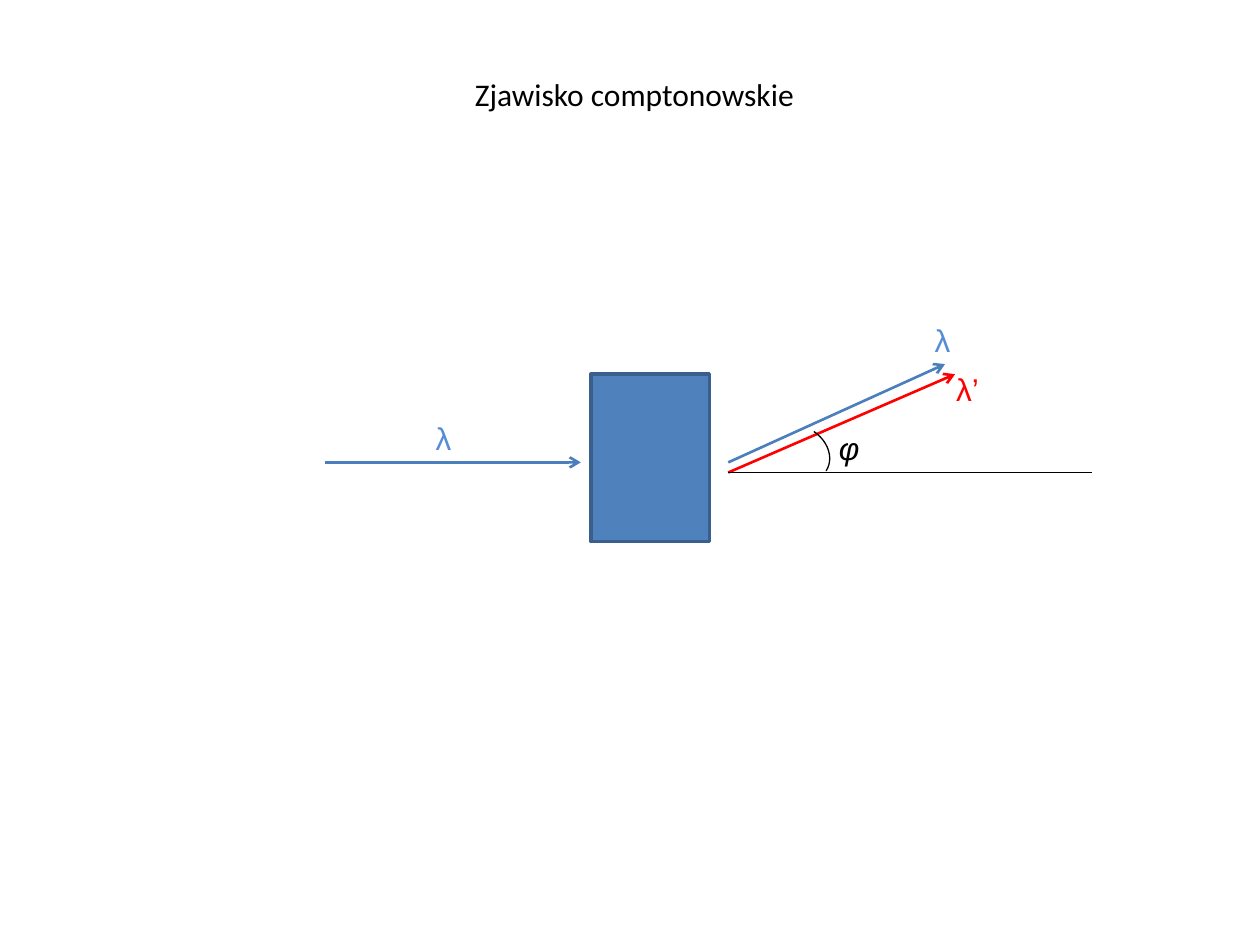
import pptx
import pptx.util
import pptx.dml.color
import pptx.enum.shapes
import pptx.enum.text
import pptx.oxml
import pptx.oxml.ns
from pptx.util import Inches

BLUE, RED, BLACK = "4B7EBC", "FF0000", "000000"
LABEL_BLUE = "558ED5"


def color(hex_text):
    return pptx.dml.color.RGBColor.from_string(hex_text)


deck = pptx.Presentation()
deck.slide_width, deck.slide_height = Inches(10), Inches(7.5)
page = deck.slides.add_slide(deck.slide_layouts[6])
shapes = page.shapes

# Scattering target
target = shapes.add_shape(pptx.enum.shapes.MSO_SHAPE.RECTANGLE,
                          Inches(4.69), Inches(2.97), Inches(0.94), Inches(1.33))
target.shadow.inherit = False
target.fill.solid()
target.fill.fore_color.rgb = color("4F81BD")
target.line.color.rgb = color("3A5F8C")
target.line.width = pptx.util.Pt(2)

# Rays and baseline: start, end, colour, width, arrowhead
rays = [
    ((2.58, 3.67), (4.61, 3.67), BLUE, 1.5, True),
    ((5.78, 3.67), (7.5, 2.89), BLUE, 1.5, True),
    ((5.78, 3.75), (7.58, 2.97), RED, 1.5, True),
    ((5.78, 3.75), (8.67, 3.75), BLACK, 0.75, False),
]
for start, end, ray_color, width, has_arrow in rays:
    ray = shapes.add_connector(pptx.enum.shapes.MSO_CONNECTOR.STRAIGHT,
                               *map(Inches, start + end))
    ray.line.color.rgb = color(ray_color)
    ray.line.width = pptx.util.Pt(width)
    if has_arrow:
        head = pptx.oxml.parse_xml(
            f'<a:tailEnd {pptx.oxml.ns.nsdecls("a")} type="arrow"/>')
        ray.line._get_or_add_ln().append(head)
    ray._element.spPr.append(
        pptx.oxml.parse_xml(f'<a:effectLst {pptx.oxml.ns.nsdecls("a")}/>'))

# Scattering angle
angle = shapes.add_shape(pptx.enum.shapes.MSO_SHAPE.ARC,
                         Inches(6.09), Inches(3.39), Inches(0.51), Inches(0.41))
angle.rotation = 33.9
angle.shadow.inherit = False
angle.fill.background()
angle.line.color.rgb = color(BLACK)
angle.line.width = pptx.util.Pt(0.75)

# Title and labels: text, left, top, width, colour, font format
labels = [
    ("Zjawisko comptonowskie", 3.67, 0.55, 2.76, BLACK, {"name": "Calibri"}),
    ("λ", 3.36, 3.28, 0.34, LABEL_BLUE, {"name": "Arial"}),
    ("λ", 7.32, 2.5, 0.34, LABEL_BLUE, {"name": "Arial"}),
    ("λ’", 7.49, 2.89, 0.4, RED, {"name": "Arial"}),
    ("φ", 6.56, 3.36, 0.33, BLACK, {"name": "Arial", "italic": True}),
]
for text, left, top, width, text_color, font_format in labels:
    box = shapes.add_textbox(Inches(left), Inches(top), Inches(width), Inches(0.4))
    box.text_frame.word_wrap = False
    box.text_frame.auto_size = pptx.enum.text.MSO_AUTO_SIZE.SHAPE_TO_FIT_TEXT
    span = box.text_frame.paragraphs[0].add_run()
    span.text = text
    span.font.size = pptx.util.Pt(18)
    span.font.color.rgb = color(text_color)
    for attribute, value in font_format.items():
        setattr(span.font, attribute, value)

deck.save("out.pptx")
